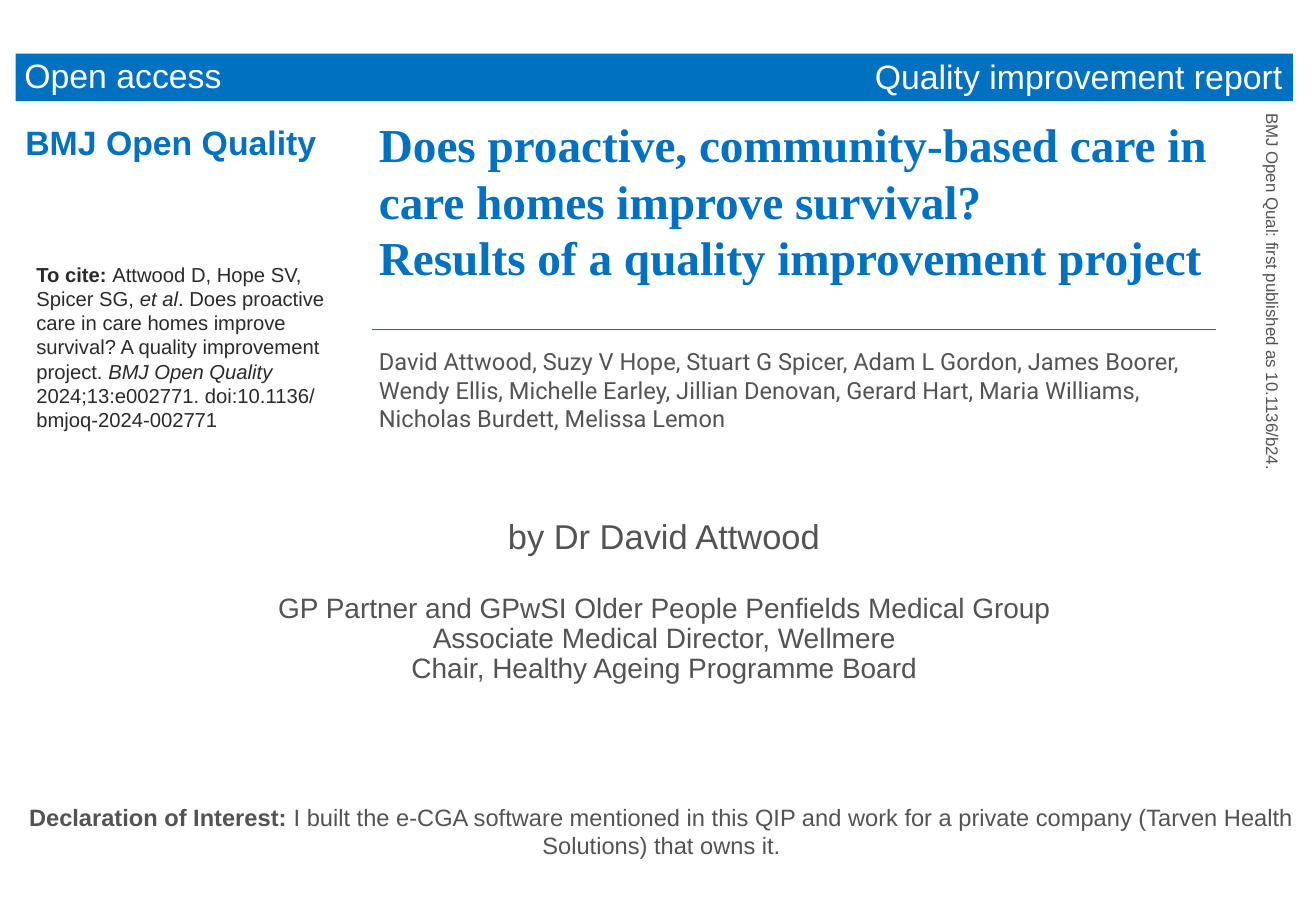
from dataclasses import dataclass

import pptx
import pptx.dml.color
import pptx.enum.shapes
import pptx.enum.text
import pptx.oxml.ns
import pptx.util
from lxml import etree
from pptx.util import Cm

Color = pptx.dml.color.RGBColor
Align = pptx.enum.text.PP_ALIGN
Anchor = pptx.enum.text.MSO_ANCHOR


@dataclass(frozen=True)
class Theme:
    blue: str = "0070C0"
    grey: str = "535353"
    ink: str = "2A2A2A"
    white: str = "FFFFFF"
    sans: str = "Arial"
    serif: str = "Times New Roman"
    author_face: str = "Roboto"
    title: float = 28
    presenter: float = 20.4
    heading: float = 20
    role: float = 16.6
    text: float = 14
    citation: float = 12
    margin_note: float = 10


THEME = Theme()


@dataclass(frozen=True)
class Piece:
    text: str
    bold: bool = False
    italic: bool = False


@dataclass(frozen=True)
class Line:
    pieces: tuple[Piece, ...]
    size: float
    color: str
    face: str = THEME.sans
    align: Align = Align.LEFT
    spacing: float = 1.0
    before: float = 0


@dataclass(frozen=True)
class Block:
    left: float
    top: float
    width: float
    height: float
    lines: tuple[Line, ...]
    anchor: Anchor = Anchor.MIDDLE
    inset_x: float = 0.15
    inset_y: float = 0.15
    rotation: float = 0


def plain(text: str, size: float, color: str, bold: bool = False, **options) -> Line:
    return Line((Piece(text, bold),), size, color, **options)


def role(text: str, before: float = 0) -> Line:
    return plain(text, THEME.role, THEME.grey, align=Align.CENTER, spacing=0.9, before=before)


TITLE = Block(7.77, 2.18, 18.62, 3.94, (
    plain("Does proactive, community-based care in care homes improve survival?\v"
          "Results of a quality improvement project",
          THEME.title, THEME.blue, bold=True, face=THEME.serif),
), Anchor.BOTTOM)

AUTHORS = Block(7.77, 7.11, 18.19, 3.94, (
    plain("David Attwood, Suzy V Hope, Stuart G Spicer, Adam L Gordon, James Boorer, "
          "Wendy Ellis, Michelle Earley, Jillian Denovan, Gerard Hart, Maria Williams, "
          "Nicholas Burdett, Melissa Lemon",
          THEME.text, THEME.grey, face=THEME.author_face),
), Anchor.TOP)

CITATION = (
    (Piece("To cite: ", bold=True), Piece("Attwood D, Hope SV,")),
    (Piece("Spicer SG, "), Piece("et al", italic=True), Piece(". Does proactive")),
    (Piece("care in care homes improve"),),
    (Piece("survival? A quality improvement"),),
    (Piece("project. "), Piece("BMJ Open Quality", italic=True)),
    (Piece("2024;13:e002771. doi:10.1136/"),),
    (Piece("bmjoq-2024-002771"),),
)

BLOCKS = (
    Block(0.23, 16.66, 27.2, 1.45, (
        Line((Piece("Declaration of Interest: ", bold=True),
              Piece("I built the e-CGA software mentioned in this QIP and work for a private "
                    "company (Tarven Health Solutions) that owns it.")),
             THEME.text, THEME.grey, align=Align.CENTER),
    ), Anchor.TOP, 0.25, 0.13),
    Block(1.88, 10.72, 24, 3.94, (
        plain("by Dr David Attwood", THEME.presenter, THEME.grey,
              align=Align.CENTER, spacing=0.9),
        role("GP Partner and GPwSI Older People Penfields Medical Group", before=22),
        role("Associate Medical Director, Wellmere"),
        role("Chair, Healthy Ageing Programme Board"),
    ), Anchor.TOP),
    Block(0.36, 0.99, 8.33, 1.14, (plain("Open access", THEME.heading, THEME.white),)),
    Block(18.14, 1.02, 9.14, 1.14,
          (plain("Quality improvement report", THEME.heading, THEME.white),)),
    Block(0.38, 2.39, 6.48, 1.14,
          (plain("BMJ Open Quality", THEME.heading, THEME.blue, bold=True),)),
    Block(0.61, 5.31, 6.48, 3.89,
          tuple(Line(pieces, THEME.citation, THEME.ink) for pieces in CITATION)),
    Block(22.63, 5.84, 7.95, 0.71,
          (plain("BMJ Open Qual: first published as 10.1136/b24.",
                 THEME.margin_note, THEME.grey),), rotation=90),
)


def write_line(para, line: Line) -> None:
    para.alignment = line.align
    para.line_spacing = line.spacing
    para.space_before = pptx.util.Pt(line.before)
    para.font.name = line.face
    para.font.size = pptx.util.Pt(line.size)
    para.font.color.rgb = Color.from_string(line.color)
    uniform = len({(piece.bold, piece.italic) for piece in line.pieces}) == 1
    if uniform:
        para.font.bold = line.pieces[0].bold
        para.font.italic = line.pieces[0].italic
    for piece in line.pieces:
        for index, text in enumerate(piece.text.split("\v")):
            if index:
                para.add_line_break()
            span = para.add_run()
            span.text = text
            if not uniform:
                span.font.bold = piece.bold
                span.font.italic = piece.italic


def fill_box(box, block: Block) -> None:
    box.left, box.top = Cm(block.left), Cm(block.top)
    box.width, box.height = Cm(block.width), Cm(block.height)
    box.rotation = block.rotation
    frame = box.text_frame
    frame.word_wrap = True
    frame.auto_size = pptx.enum.text.MSO_AUTO_SIZE.NONE
    frame.vertical_anchor = block.anchor
    frame.margin_left = frame.margin_right = Cm(block.inset_x)
    frame.margin_top = frame.margin_bottom = Cm(block.inset_y)
    for index, line in enumerate(block.lines):
        write_line(frame.add_paragraph() if index else frame.paragraphs[0], line)


def draw_banner(slide) -> None:
    banner = slide.shapes.add_shape(
        pptx.enum.shapes.MSO_SHAPE.RECTANGLE, Cm(0.33), Cm(1.12), Cm(26.7), Cm(0.99))
    banner.shadow.inherit = False
    banner.fill.solid()
    banner.fill.fore_color.rgb = Color.from_string(THEME.blue)
    banner.line.fill.background()


def draw_rule(slide) -> None:
    rule = slide.shapes.add_connector(
        pptx.enum.shapes.MSO_CONNECTOR.STRAIGHT, Cm(7.77), Cm(6.88), Cm(25.43), Cm(6.88))
    rule.line.color.rgb = Color.from_string(THEME.blue)
    rule.line.width = pptx.util.Pt(0.25)
    etree.SubElement(rule._element.spPr, pptx.oxml.ns.qn("a:effectLst"))


def main() -> None:
    deck = pptx.Presentation()
    deck.slide_width, deck.slide_height = Cm(27.51), Cm(19.05)
    slide = deck.slides.add_slide(deck.slide_layouts[0])
    fill_box(slide.shapes.title, TITLE)
    fill_box(slide.placeholders[1], AUTHORS)
    draw_banner(slide)
    draw_rule(slide)
    for block in BLOCKS:
        fill_box(slide.shapes.add_textbox(0, 0, 0, 0), block)
    deck.save("out.pptx")


if __name__ == "__main__":
    main()
